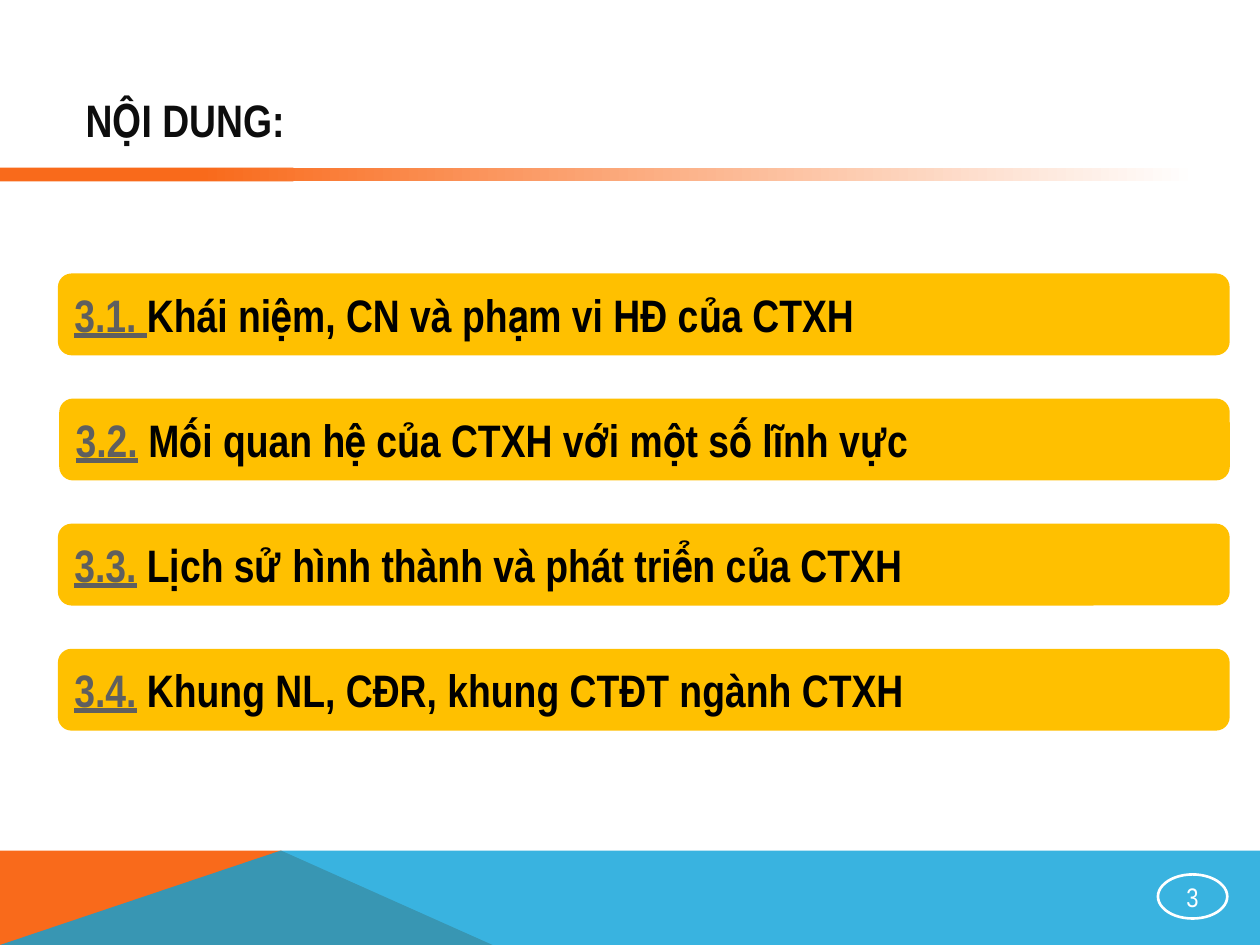
from dataclasses import dataclass

from lxml import etree
from pptx import Presentation
from pptx import util as u
from pptx.dml.color import RGBColor
from pptx.enum import shapes, text
from pptx.oxml.ns import qn


@dataclass(frozen=True)
class Theme:
    font: str = "Arial Narrow"
    orange: str = "F96A1B"
    blue: str = "08A1D9"
    amber: str = "FFC000"
    white: str = "FFFFFF"
    title: str = "0D0D0D"
    number: str = "5F5F5F"
    body: str = "000000"
    large: float = 26
    small: float = 15.3


theme = Theme()


def add_text(para, wording, color, size=theme.large, bold=True, underline=False):
    span = para.add_run()
    span.text = wording
    font = span.font
    font.name, font.size = theme.font, u.Pt(size)
    font.bold, font.underline = bold, underline
    font.color.rgb = RGBColor.from_string(color)


def style_shape(shape, fill=None):
    """Remove the shadow and outline, and fill with one colour or none."""
    shape.shadow.inherit = False
    shape.line.fill.background()
    if fill:
        shape.fill.solid()
        shape.fill.fore_color.rgb = RGBColor.from_string(fill)
    else:
        shape.fill.background()


deck = Presentation()
deck.slide_width, deck.slide_height = u.Inches(10), u.Inches(7.5)
page = deck.slides.add_slide(deck.slide_layouts[5])

# Footer band: the translucent blue overlaps the orange
footer_parts = [
    (theme.orange, [(0, 7.5), (0, 6.75), (2.23, 6.75), (3.91, 7.5)]),
    (theme.blue, [(0, 7.5), (2.23, 6.75), (10, 6.75), (10, 7.5)]),
]
for color, corners in footer_parts:
    points = [(u.Inches(x), u.Inches(y)) for x, y in corners]
    outline = page.shapes.build_freeform(*points[0])
    outline.add_line_segments(points[1:], close=True)
    band = outline.convert_to_shape()
    style_shape(band, color)
blue_fill = band.fill.fore_color._xFill.find(qn("a:srgbClr"))
etree.SubElement(blue_fill, qn("a:alpha"), val="80000")

# Rule under the title: solid, then fading to white
for left, width in [(0, 2.33), (1.58, 7.92)]:
    rule = page.shapes.add_shape(
        shapes.MSO_SHAPE.RECTANGLE,
        u.Inches(left), u.Inches(1.33), u.Inches(width), u.Inches(0.11))
    style_shape(rule, theme.orange)
rule.fill.gradient()
rule.fill.gradient_angle = 0
for stop, color in zip(rule.fill.gradient_stops, (theme.orange, theme.white)):
    stop.color.rgb = RGBColor.from_string(color)

title = page.shapes.title
title.left, title.top = u.Inches(0.58), u.Inches(0.65)
title.width, title.height = u.Inches(8.92), u.Inches(0.6)
title.text_frame.vertical_anchor = text.MSO_ANCHOR.MIDDLE
title_para = title.text_frame.paragraphs[0]
title_para.alignment = text.PP_ALIGN.LEFT
add_text(title_para, "NỘI DUNG:", theme.title)

badge = page.shapes.add_shape(
    shapes.MSO_SHAPE.OVAL,
    u.Inches(9.19), u.Inches(6.94), u.Inches(0.55), u.Inches(0.35))
style_shape(badge)
badge.line.color.rgb = RGBColor.from_string(theme.white)
badge.line.width = u.Pt(1.5)
frame = badge.text_frame
frame.margin_left = frame.margin_right = u.Inches(0.01)
frame.margin_top = frame.margin_bottom = u.Inches(0.01)
frame.vertical_anchor = text.MSO_ANCHOR.MIDDLE
frame.paragraphs[0].alignment = text.PP_ALIGN.CENTER
add_text(frame.paragraphs[0], "3", theme.white, size=theme.small, bold=False)

# Contents: bars at an equal pitch with a shared right edge
bar_right, bar_top, bar_pitch = 9.76, 2.17, 0.993
contents = [
    (0.46, "3.1. ", "Khái niệm, CN và phạm vi HĐ của CTXH"),
    (0.47, "3.2.", " Mối quan hệ của CTXH với một số lĩnh vực"),
    (0.46, "3.3.", " Lịch sử hình thành và phát triển của CTXH"),
    (0.46, "3.4.", " Khung NL, CĐR, khung CTĐT ngành CTXH"),
]
for row, (left, number, topic) in enumerate(contents):
    bar = page.shapes.add_shape(
        shapes.MSO_SHAPE.ROUNDED_RECTANGLE,
        u.Inches(left), u.Inches(bar_top + row * bar_pitch),
        u.Inches(bar_right - left), u.Inches(0.65))
    style_shape(bar, theme.amber)
    bar.text_frame.word_wrap = True
    bar.text_frame.vertical_anchor = text.MSO_ANCHOR.MIDDLE
    para = bar.text_frame.paragraphs[0]
    para.alignment = text.PP_ALIGN.LEFT
    add_text(para, number, theme.number, underline=True)
    add_text(para, topic, theme.body)

deck.save("out.pptx")
